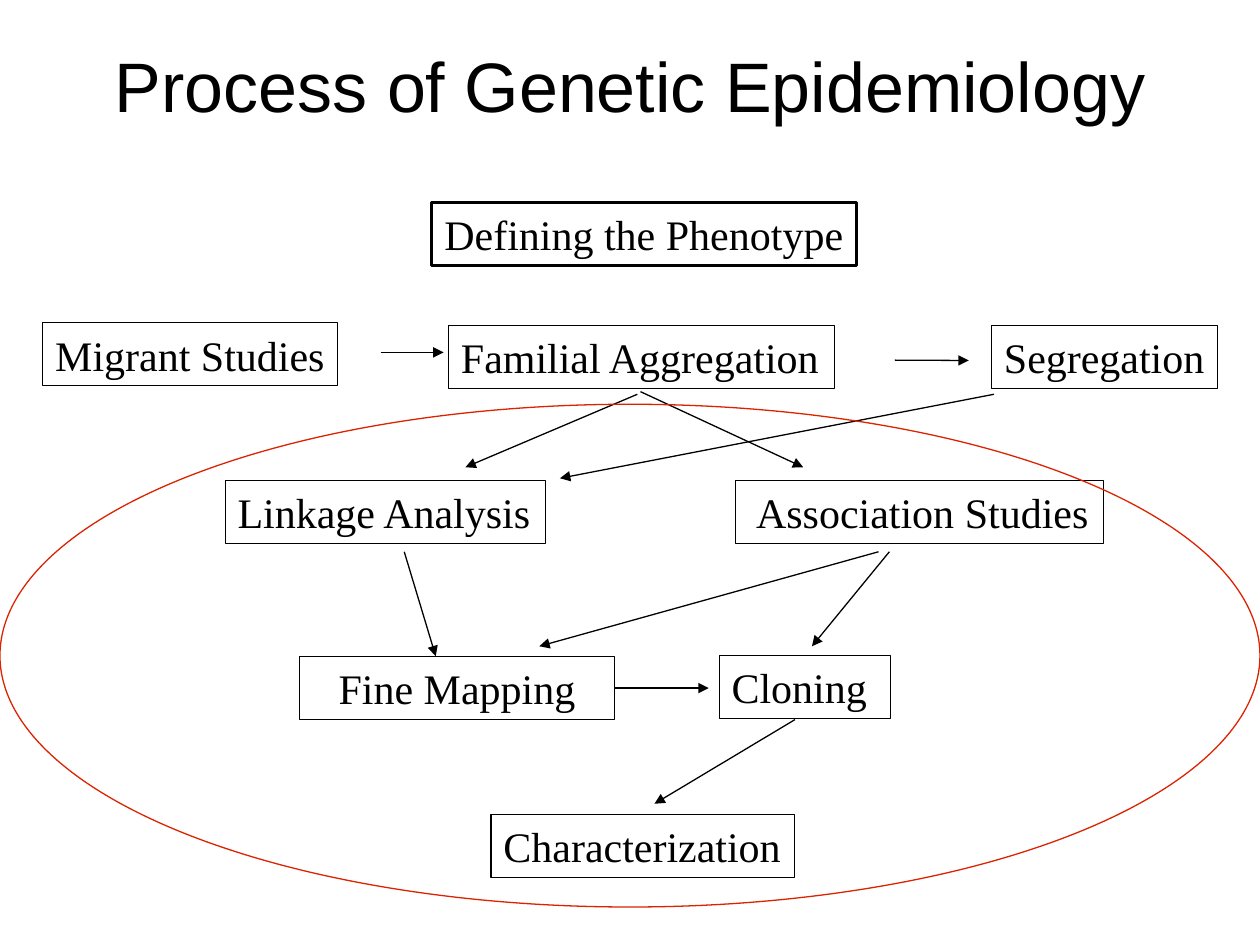
"""Build the slide showing the process of genetic epidemiology."""
from dataclasses import dataclass
from typing import Optional

from lxml import etree
from pptx import Presentation
from pptx.dml.color import RGBColor
from pptx.enum import shapes, text
from pptx.oxml import ns
from pptx.util import Pt


@dataclass(frozen=True)
class Theme:
    """Colours, fonts and sizes of the slide."""
    ink: RGBColor = RGBColor(0, 0, 0)
    ring: RGBColor = RGBColor(0xDC, 0x23, 0x00)
    title_font: str = "Arial"
    body_font: str = "Times New Roman"
    title_size: float = 40
    body_size: float = 24
    line: float = 0.75
    heavy_line: float = 1.75
    box_height: float = 36


@dataclass(frozen=True)
class Step:
    """A labelled box, in points."""
    label: str
    left: float
    top: float
    width: float
    line: float
    align: text.PP_ALIGN = text.PP_ALIGN.LEFT


@dataclass(frozen=True)
class Arrow:
    """An arrow between two places, in points, perhaps starting on a box."""
    x1: float
    y1: float
    x2: float
    y2: float
    source: Optional[str] = None


THEME = Theme()
STEPS = (
    Step("Migrant Studies", 24.5, 184.5, 168.5, THEME.line),
    Step("Familial Aggregation", 256.3, 186, 220.5, THEME.line),
    Step("Segregation", 566.6, 186, 129, THEME.line),
    Step(" Association Studies", 420.3, 274.7, 210.2, THEME.line),
    Step("Linkage Analysis", 128.7, 274.7, 183, THEME.line),
    Step("Fine Mapping", 171.2, 375.2, 180, THEME.line, text.PP_ALIGN.CENTER),
    Step("Cloning", 411, 374.6, 97.8, THEME.line),
    Step("Defining the Phenotype", 246.8, 115.5, 242.8, THEME.heavy_line),
    Step("Characterization", 280.6, 465.3, 173.5, THEME.line),
)
ARROWS = (
    Arrow(217.5, 201.4, 253.5, 201.4),
    Arrow(568, 225.3, 320, 273.3),
    Arrow(364.2, 225.3, 266, 267),
    Arrow(366, 223.8, 459, 267),
    Arrow(511.4, 205.8, 553.6, 206),
    Arrow(231, 315.3, 249, 375),
    Arrow(502, 315.3, 308.2, 369.3),
    Arrow(508.2, 315.3, 464, 369.3),
    Arrow(351.2, 393.2, 405, 393.2, "Fine Mapping"),
    Arrow(454.3, 411.2, 374, 459.3),
)


def add_run(p, label: str, font: str, size: float) -> None:
    """Add one formatted run to a paragraph."""
    r = p.add_run()
    r.text = label
    r.font.name = font
    r.font.size = Pt(size)
    r.font.color.rgb = THEME.ink


def add_title(slide, label: str) -> None:
    """Place and format the title placeholder."""
    sp = slide.shapes.title
    sp.left, sp.top, sp.width, sp.height = Pt(0), Pt(18), Pt(720), Pt(60)
    tf = sp.text_frame
    tf.vertical_anchor = text.MSO_ANCHOR.MIDDLE
    p = tf.paragraphs[0]
    p.alignment = text.PP_ALIGN.CENTER
    add_run(p, label, THEME.title_font, THEME.title_size)


def add_outline(slide, kind, left: float, top: float, width: float,
                height: float, color: RGBColor, line: float):
    """Add an unfilled preset shape."""
    sp = slide.shapes.add_shape(kind, Pt(left), Pt(top), Pt(width), Pt(height))
    sp.shadow.inherit = False
    sp.fill.background()
    sp.line.color.rgb = color
    sp.line.width = Pt(line)
    return sp


def add_step(slide, step: Step):
    """Add a labelled box."""
    sp = add_outline(slide, shapes.MSO_SHAPE.RECTANGLE, step.left, step.top,
                     step.width, THEME.box_height, THEME.ink, step.line)
    tf = sp.text_frame
    tf.word_wrap = True
    tf.vertical_anchor = text.MSO_ANCHOR.TOP
    centred = step.align == text.PP_ALIGN.CENTER
    tf.margin_left, tf.margin_right = Pt(7.2), Pt(7.2 if centred else 0)
    tf.margin_top = tf.margin_bottom = Pt(3.6)
    p = tf.paragraphs[0]
    p.alignment = step.align
    add_run(p, step.label, THEME.body_font, THEME.body_size)
    return sp


def add_arrow(slide, arrow: Arrow, boxes: dict) -> None:
    """Add a straight connector with a triangular head."""
    sp = slide.shapes.add_connector(
        shapes.MSO_CONNECTOR.STRAIGHT,
        Pt(arrow.x1), Pt(arrow.y1), Pt(arrow.x2), Pt(arrow.y2))
    if arrow.source:
        sp.begin_connect(boxes[arrow.source], 3)
    sp.line.color.rgb = THEME.ink
    sp.line.width = Pt(THEME.line)
    etree.SubElement(sp.line._get_or_add_ln(), ns.qn("a:tailEnd"), type="triangle")
    etree.SubElement(sp._element.spPr, ns.qn("a:effectLst"))


def main() -> None:
    """Build and save the presentation."""
    prs = Presentation()
    prs.slide_width, prs.slide_height = Pt(720), Pt(540)
    slide = prs.slides.add_slide(prs.slide_layouts[5])
    add_title(slide, "Process of Genetic Epidemiology")
    boxes = {step.label: add_step(slide, step) for step in STEPS}
    for arrow in ARROWS:
        add_arrow(slide, arrow, boxes)
    add_outline(slide, shapes.MSO_SHAPE.OVAL, 0, 231, 720, 287.3,
                THEME.ring, THEME.line)
    prs.save("out.pptx")


if __name__ == "__main__":
    main()
